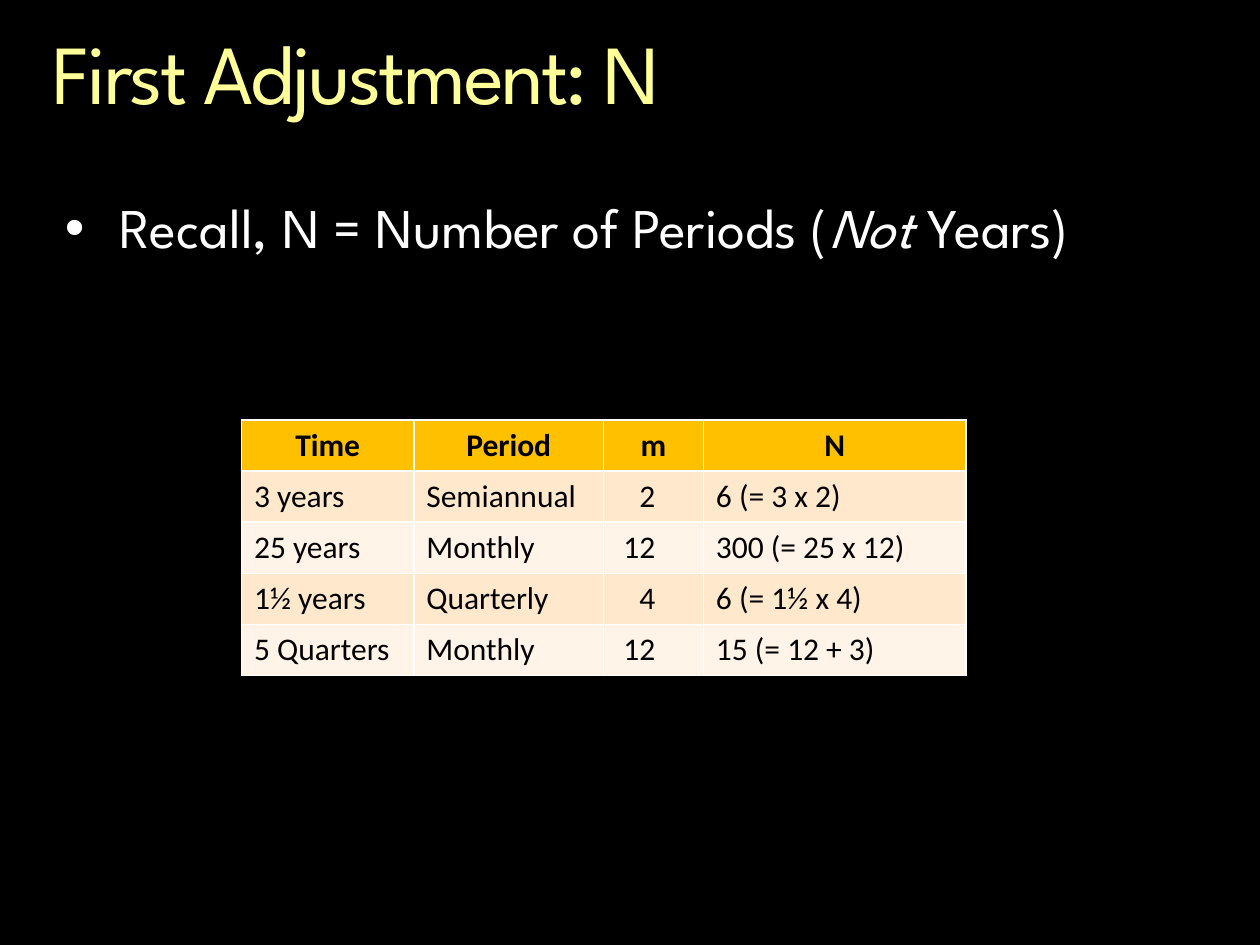
"""Build the slide on the first adjustment, N, with its table of periods."""
from lxml.etree import SubElement
from pptx import Presentation
from pptx.dml.color import RGBColor
from pptx.enum.text import MSO_ANCHOR as Anchor, MSO_AUTO_SIZE as AutoSize, PP_ALIGN as Align
from pptx.oxml.ns import qn
from pptx.util import Pt


def paint(fill, color):
    fill.solid()
    fill.fore_color.rgb = RGBColor.from_string(color)


def style(font, name, size, color, bold=False):
    font.name, font.size, font.bold = name, Pt(size), bold
    paint(font.fill, color)


presentation = Presentation()
presentation.slide_width, presentation.slide_height = Pt(720), Pt(540)
slide = presentation.slides.add_slide(presentation.slide_layouts[5])
paint(slide.background.fill, "000000")

title = slide.shapes.title
title.left, title.top, title.width, title.height = Pt(30), Pt(18), Pt(660), Pt(52.5)
frame = title.text_frame
frame.margin_left = frame.margin_top = frame.margin_right = frame.margin_bottom = 0
frame.auto_size, frame.vertical_anchor = AutoSize.NONE, Anchor.TOP
paragraph = frame.paragraphs[0]
paragraph.alignment, paragraph.line_spacing = Align.LEFT, 0.9
run = paragraph.add_run()
run.text = "First Adjustment: N"
style(run.font, "League Spartan", 48, "FFFF99")
run.font._element.set("spc", "-150")

body = slide.shapes.add_textbox(Pt(30), Pt(111), Pt(660), Pt(327))
body.text_frame.word_wrap = True
paragraph = body.text_frame.paragraphs[0]
paragraph.line_spacing = 0.9
properties = paragraph._p.get_or_add_pPr()
properties.set("marL", str(Pt(31)))
properties.set("indent", str(Pt(-31)))
SubElement(properties, qn("a:buFont"), typeface="Arial")
SubElement(properties, qn("a:buChar"), char="•")
style(paragraph.font, "League Spartan", 32, "FFFFFF")
for text, italic in (("Recall, N = Number of Periods (", False), ("Not", True), (" Years)", False)):
    run = paragraph.add_run()
    run.text = text
    style(run.font, "League Spartan", 32, "FFFFFF")
    run.font.italic = italic

rows = [
    ("Time", "Period", "m", "N"),
    ("3 years", "Semiannual", "2", "6 (= 3 x 2)"),
    ("25 years", "Monthly", "12", "300 (= 25 x 12)"),
    ("1½ years", "Quarterly", "4", "6 (= 1½ x 4)"),
    ("5 Quarters", "Monthly", "12", "15 (= 12 + 3)"),
]
widths = [98.5, 108.5, 57, 150]
table = slide.shapes.add_table(
    len(rows), len(widths), Pt(138), Pt(240), Pt(sum(widths)), Pt(29.2 * len(rows))
).table
for column, width in zip(table.columns, widths):
    column.width = Pt(width)
for row_index, row in enumerate(rows):
    header = row_index == 0
    band = "FFC000" if header else ("FFF4E7", "FFE8CC")[row_index % 2]
    for column_index, text in enumerate(row):
        cell = table.cell(row_index, column_index)
        cell.text = text
        paint(cell.fill, band)
        paragraph = cell.text_frame.paragraphs[0]
        style(paragraph.font, "Calibri", 18, "000000", header)
        if header:
            paragraph.alignment = Align.CENTER
        elif column_index == 2:
            paragraph.alignment = Align.RIGHT
            cell.margin_right = Pt(27.5)

presentation.save("out.pptx")
